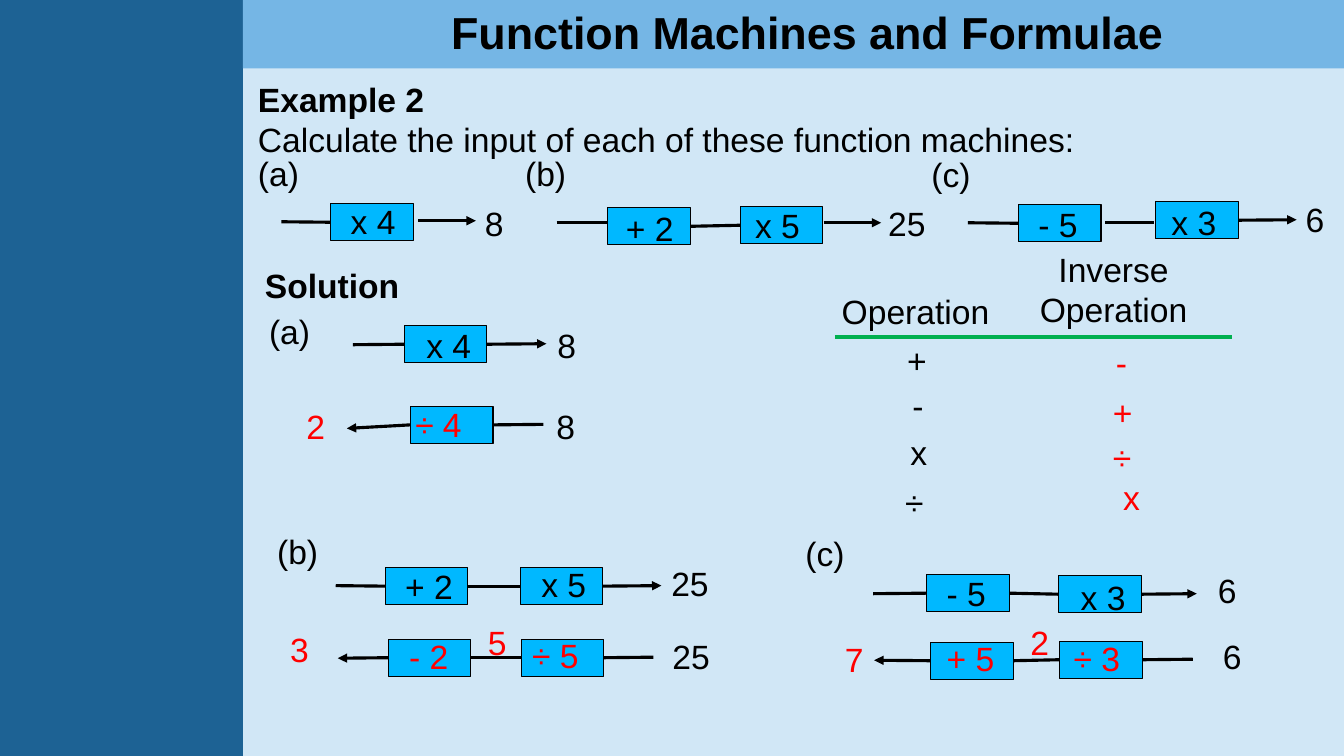
from dataclasses import dataclass

from lxml.etree import SubElement
from pptx import Presentation
from pptx.dml.color import RGBColor
from pptx.enum.shapes import MSO_CONNECTOR as Link, MSO_SHAPE as Form
from pptx.enum.text import MSO_AUTO_SIZE as Fit, PP_ALIGN as Align
from pptx.oxml.ns import qn
from pptx.util import Inches, Pt

BLACK = RGBColor(0x00, 0x00, 0x00)
RED = RGBColor(0xFF, 0x00, 0x00)
GREEN = RGBColor(0x00, 0xB0, 0x50)
CYAN = RGBColor(0x00, 0xB8, 0xFF)
PALE = RGBColor(0xD1, 0xE7, 0xF6)
SKY = RGBColor(0x75, 0xB6, 0xE5)
NAVY = RGBColor(0x1D, 0x62, 0x94)

BOX_W, BOX_H = 0.82, 0.37
LABEL_H = 0.5
WIDTHS = {
    "(a)": 0.61, "(b)": 0.61, "(c)": 0.59, "Solution": 1.54, "Operation": 1.97,
    "+": 0.4, "-": 0.31, "x": 0.37, "÷": 0.54, "25": 0.58,
    "x 3": 0.65, "x 4": 0.65, "x 5": 0.65, "+ 2": 0.68, "+ 5": 0.68,
    "- 2": 0.59, "- 5": 0.59, "÷ 3": 0.82, "÷ 4": 0.82, "÷ 5": 0.82,
}
DIGIT_W = 0.39


@dataclass
class Label:
    text: str
    left: float
    top: float
    color: RGBColor = BLACK
    bold: bool = False


@dataclass
class Box:
    """A function box and the place of its label."""
    left: float
    top: float
    label: Label


@dataclass
class Line:
    x1: float
    y1: float
    x2: float
    y2: float
    arrow: bool = False


BOXES = [
    # Question
    Box(3.28, 2.02, Label("x 4", 3.38, 1.94)),
    Box(6.03, 2.06, Label("+ 2", 6.11, 2.01)),
    Box(7.34, 2.05, Label("x 5", 7.39, 1.98)),
    Box(10.1, 2.03, Label("- 5", 10.2, 1.97)),
    Box(11.46, 2, Label("x 3", 11.52, 1.95)),
    # Solution (a)
    Box(4.01, 3.23, Label("x 4", 4.13, 3.17)),
    Box(4.07, 4.03, Label("÷ 4", 4.02, 3.96, RED)),
    # Solution (b)
    Box(3.82, 5.63, Label("+ 2", 3.92, 5.57)),
    Box(5.16, 5.63, Label("x 5", 5.27, 5.55)),
    Box(3.85, 6.34, Label("- 2", 3.96, 6.26, RED)),
    Box(5.17, 6.34, Label("÷ 5", 5.18, 6.25, RED)),
    # Solution (c)
    Box(9.19, 5.7, Label("- 5", 9.29, 5.63)),
    Box(10.5, 5.71, Label("x 3", 10.62, 5.67)),
    Box(9.23, 6.37, Label("+ 5", 9.29, 6.28, RED)),
    Box(10.51, 6.36, Label("÷ 3", 10.55, 6.28, RED)),
]

LINES = [
    # Question
    Line(2.79, 2.2, 3.28, 2.2), Line(4.15, 2.19, 4.72, 2.19, True),
    Line(5.52, 2.21, 6.02, 2.21), Line(6.85, 2.23, 7.34, 2.23),
    Line(8.17, 2.21, 8.74, 2.21, True),
    Line(9.6, 2.21, 10.09, 2.21), Line(10.96, 2.21, 11.45, 2.21),
    Line(12.28, 2.18, 12.86, 2.18, True),
    # Solution (a)
    Line(3.5, 3.42, 3.99, 3.42), Line(4.84, 3.41, 5.42, 3.41, True),
    Line(4.9, 4.21, 5.39, 4.21), Line(4.07, 4.23, 3.44, 4.25, True),
    # Solution (b)
    Line(3.33, 5.81, 3.82, 5.81), Line(4.66, 5.81, 5.16, 5.81),
    Line(5.99, 5.81, 6.56, 5.81, True),
    Line(5.99, 6.52, 6.48, 6.52), Line(4.67, 6.53, 5.16, 6.53),
    Line(3.85, 6.53, 3.35, 6.53, True),
    # Solution (c)
    Line(8.66, 5.89, 9.15, 5.89), Line(10, 5.89, 10.5, 5.89),
    Line(11.29, 5.89, 11.87, 5.89, True),
    Line(11.34, 6.54, 11.83, 6.54), Line(10.03, 6.56, 10.52, 6.56),
    Line(9.23, 6.55, 8.67, 6.55, True),
]

LABELS = [
    # Question
    Label("(a)", 2.46, 1.47), Label("(b)", 5.11, 1.47), Label("(c)", 9.14, 1.48),
    Label("8", 4.71, 1.96), Label("25", 8.71, 1.96), Label("6", 12.85, 1.92),
    # Solution (a)
    Label("Solution", 2.53, 2.58, bold=True), Label("(a)", 2.57, 3.04),
    Label("8", 5.43, 3.17), Label("8", 5.42, 3.98), Label("2", 2.94, 3.98, RED),
    # Solution (b)
    Label("(b)", 2.65, 5.22), Label("25", 6.56, 5.54), Label("25", 6.57, 6.26),
    Label("5", 4.74, 6.12, RED), Label("3", 2.78, 6.19, RED),
    # Solution (c)
    Label("(c)", 7.89, 5.24), Label("6", 11.98, 5.6), Label("6", 12.03, 6.26),
    Label("2", 10.12, 6.12, RED), Label("7", 8.28, 6.29, RED),
    # Inverse operations
    Label("Operation", 8.25, 2.84),
    Label("+", 8.9, 3.32), Label("-", 8.95, 3.77),
    Label("x", 8.93, 4.24), Label("÷", 8.88, 4.73),
    Label("-", 10.97, 3.34, RED), Label("+", 10.94, 3.84, RED),
    Label("÷", 10.94, 4.29, RED), Label("x", 11.04, 4.68, RED),
]


def add_text(slide, text: str, left: float, top: float, width: float,
             height: float = LABEL_H, size: int = 24, color: RGBColor = BLACK,
             bold: bool = False, align: Align = Align.LEFT, wrap: bool = False):
    area = slide.shapes.add_textbox(*map(Inches, (left, top, width, height)))
    frame = area.text_frame
    frame.word_wrap = wrap
    frame.auto_size = Fit.SHAPE_TO_FIT_TEXT
    frame.text = text
    for para in frame.paragraphs:
        para.alignment = align
        font = para.font
        font.name, font.size, font.bold = "Arial", Pt(size), bold
        font.color.rgb = color
    return frame


def add_label(slide, label: Label) -> None:
    add_text(slide, label.text, label.left, label.top,
             WIDTHS.get(label.text, DIGIT_W), color=label.color, bold=label.bold)


def add_rect(slide, left: float, top: float, width: float, height: float,
             fill: RGBColor, edge: bool = False):
    rect = slide.shapes.add_shape(
        Form.RECTANGLE, *map(Inches, (left, top, width, height)))
    rect.shadow.inherit = False
    rect.fill.solid()
    rect.fill.fore_color.rgb = fill
    if edge:
        rect.line.color.rgb = BLACK
        rect.line.width = Pt(0.75)
    else:
        rect.line.fill.background()
    return rect


def add_line(slide, line: Line, color: RGBColor = BLACK, width: float = 2.25):
    wire = slide.shapes.add_connector(
        Link.STRAIGHT, *map(Inches, (line.x1, line.y1, line.x2, line.y2)))
    wire.line.color.rgb = color
    wire.line.width = Pt(width)
    if line.arrow:
        SubElement(wire.line._get_or_add_ln(), qn("a:tailEnd"), type="triangle")
    SubElement(wire._element.spPr, qn("a:effectLst"))
    return wire


def join(wire, line: Line, box: Box, rect) -> None:
    """Glue each end of the wire that meets the middle of a box side."""
    mid = box.top + BOX_H / 2
    ends = ((line.x1, line.y1, wire.begin_connect),
            (line.x2, line.y2, wire.end_connect))
    for side, edge in ((1, box.left), (3, box.left + BOX_W)):
        for x, y, connect in ends:
            if abs(x - edge) < 0.04 and abs(y - mid) < 0.02:
                connect(rect, side)


def main() -> None:
    deck = Presentation()
    deck.slide_width, deck.slide_height = Inches(13.33), Inches(7.5)
    slide = deck.slides.add_slide(deck.slide_layouts[6])
    slide.background.fill.solid()
    slide.background.fill.fore_color.rgb = PALE

    add_rect(slide, 0, 0, 2.41, 7.5, NAVY)
    add_rect(slide, 2.41, 0, 10.92, 0.68, SKY)
    add_text(slide, "Function Machines and Formulae", 4.15, 0, 7.72, 0.64,
             size=32, bold=True, align=Align.CENTER, wrap=True)
    intro = add_text(
        slide, "Example 2\nCalculate the input of each of these function machines:",
        2.46, 0.73, 9.21, 0.91, wrap=True)
    intro.paragraphs[0].font.bold = True
    add_text(slide, "Inverse\nOperation", 10.16, 2.42, 1.77, 0.91,
             align=Align.CENTER)
    add_line(slide, Line(8.28, 3.34, 12.22, 3.34), GREEN, 3)

    rects = [add_rect(slide, box.left, box.top, BOX_W, BOX_H, CYAN, edge=True)
             for box in BOXES]
    for line in LINES:
        wire = add_line(slide, line)
        for box, rect in zip(BOXES, rects):
            join(wire, line, box, rect)
    for label in [box.label for box in BOXES] + LABELS:
        add_label(slide, label)
    deck.save("out.pptx")


if __name__ == "__main__":
    main()
